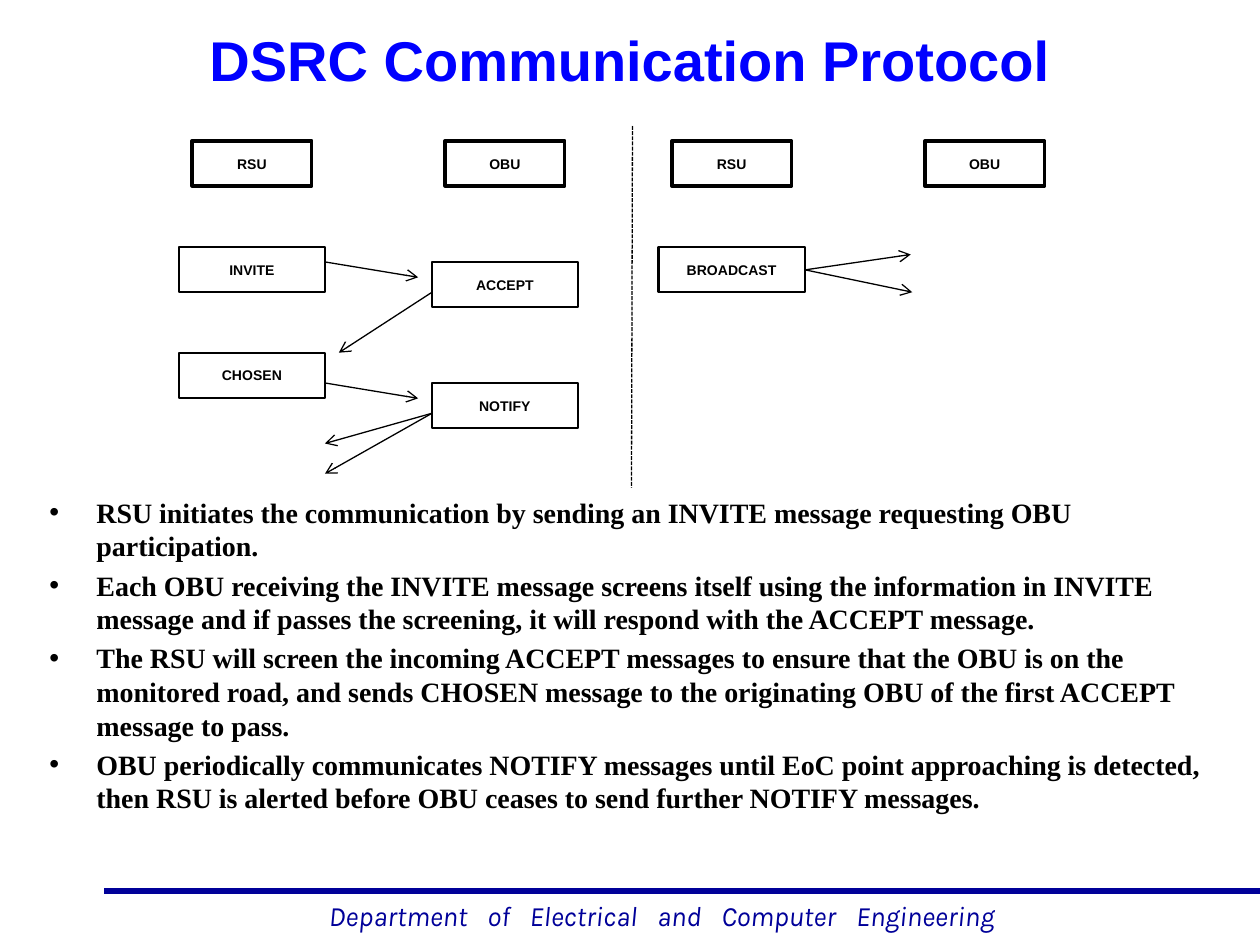
import pptx
import pptx.util
import pptx.dml.color
import pptx.enum.dml
import pptx.enum.shapes
import pptx.enum.text
import pptx.oxml.ns
import lxml.etree

Cm = pptx.util.Cm
Pt = pptx.util.Pt
RGBColor = pptx.dml.color.RGBColor
Anchor = pptx.enum.text.MSO_ANCHOR
Align = pptx.enum.text.PP_ALIGN
qn = pptx.oxml.ns.qn

BLACK = RGBColor(0x00, 0x00, 0x00)
WHITE = RGBColor(0xFF, 0xFF, 0xFF)
BLUE = RGBColor(0x00, 0x00, 0xFF)
NAVY = RGBColor(0x00, 0x00, 0x99)

TITLE = "DSRC Communication Protocol"
FOOTER = "Department of Electrical and Computer Engineering"
BULLETS = [
    "RSU initiates the communication by sending an INVITE message requesting OBU participation.",
    "Each OBU receiving the INVITE message screens itself using the information in INVITE message "
    "and if passes the screening, it will respond with the ACCEPT message.",
    "The RSU will screen the incoming ACCEPT messages to ensure that the OBU is on the monitored road, "
    "and sends CHOSEN message to the originating OBU of the first ACCEPT message to pass.",
    "OBU periodically communicates NOTIFY messages until EoC point approaching is detected, "
    "then RSU is alerted before OBU ceases to send further NOTIFY messages.",
]

COLUMN_CENTERS = [5.08, 10.18, 14.75, 19.85]
BOX_HEIGHT = 0.91
HEAD_TOP, HEAD_WIDTH, HEAD_LINE = 2.84, 2.41, 2
MESSAGE_WIDTH, MESSAGE_LINE = 2.95, 1.25
HEADS = ["RSU", "OBU", "RSU", "OBU"]
MESSAGES = [
    ("INVITE", 0, 4.98),
    ("ACCEPT", 1, 5.28),
    ("CHOSEN", 0, 7.11),
    ("NOTIFY", 1, 7.72),
    ("BROADCAST", 2, 4.98),
]
ARROWS = [
    (6.55, 5.28, 8.43, 5.59),
    (8.71, 5.89, 6.83, 7.11),
    (6.55, 7.72, 8.43, 8.03),
    (8.71, 8.33, 6.55, 9.55),
    (8.71, 8.33, 6.55, 8.94),
    (16.23, 5.44, 18.36, 5.13),
    (16.23, 5.44, 18.39, 5.89),
]
DIVIDER = (12.75, 2.54, 12.73, 9.83)
FOOTER_RULE = (2.1, 17.96, 25.4, 17.96)


def place(shape, left, top, width, height):
    shape.left, shape.top = Cm(left), Cm(top)
    shape.width, shape.height = Cm(width), Cm(height)


def style(font, name, size, color, bold=True):
    font.name, font.size, font.bold = name, Pt(size), bold
    font.color.rgb = color


def add_line(page, ends, color, width, arrow=False):
    line = page.shapes.add_connector(
        pptx.enum.shapes.MSO_CONNECTOR.STRAIGHT, *[Cm(value) for value in ends])
    line.line.color.rgb = color
    line.line.width = Pt(width)
    properties = line._element.spPr
    if arrow:
        lxml.etree.SubElement(properties.find(qn("a:ln")), qn("a:tailEnd"), type="arrow")
    lxml.etree.SubElement(properties, qn("a:effectLst"))
    return line


def add_box(page, label, column, top, width, line_width):
    box = page.shapes.add_shape(
        pptx.enum.shapes.MSO_SHAPE.FLOWCHART_PROCESS,
        Cm(COLUMN_CENTERS[column] - width / 2), Cm(top), Cm(width), Cm(BOX_HEIGHT))
    box.shadow.inherit = False
    box.fill.solid()
    box.fill.fore_color.rgb = WHITE
    box.line.color.rgb = BLACK
    box.line.width = Pt(line_width)
    frame = box.text_frame
    frame.text = label
    frame.vertical_anchor = Anchor.MIDDLE
    frame.paragraphs[0].alignment = Align.CENTER
    style(frame.paragraphs[0].runs[0].font, "Arial", 8, BLACK)


def add_title(page):
    title = page.shapes.title
    place(title, 1.27, 0.3, 22.86, 1.78)
    frame = title.text_frame
    frame.text = TITLE
    frame.auto_size = pptx.enum.text.MSO_AUTO_SIZE.NONE
    frame.vertical_anchor = Anchor.MIDDLE
    frame.paragraphs[0].alignment = Align.CENTER
    style(frame.paragraphs[0].runs[0].font, "Arial", 32, BLUE)


def add_bullets(page):
    body = page.placeholders[1]
    place(body, 0.74, 9.86, 23.93, 7.62)
    frame = body.text_frame
    frame.text = "\n".join(BULLETS)
    frame.auto_size = pptx.enum.text.MSO_AUTO_SIZE.NONE
    for index, para in enumerate(frame.paragraphs):
        properties = para._p.get_or_add_pPr()
        properties.set("marL", str(Cm(0.95)))
        properties.set("indent", str(Cm(-0.95)))
        lxml.etree.SubElement(properties, qn("a:buChar"), char="•")
        para.space_before = Pt(3.2 if index else 0)
        style(para.runs[0].font, "Times New Roman", 16, BLACK)


def add_footer(page):
    add_line(page, FOOTER_RULE, NAVY, 3)
    box = page.shapes.add_textbox(Cm(6.38), Cm(17.98), Cm(14.53), Cm(0.94))
    box.text_frame.word_wrap = False
    para = box.text_frame.paragraphs[0]
    for index, word in enumerate(FOOTER.split()):
        for text in ([" ", word] if index else [word]):
            span = para.add_run()
            span.text = text
            style(span.font, "Karla", 16, NAVY, bold=False)
            span.font.italic = True
            if text == " ":
                span.font._element.set("spc", "800")


def main():
    deck = pptx.Presentation()
    deck.slide_width, deck.slide_height = Cm(25.4), Cm(19.05)
    page = deck.slides.add_slide(deck.slide_layouts[1])
    add_footer(page)
    add_title(page)
    add_bullets(page)
    for ends in ARROWS:
        add_line(page, ends, BLACK, 0.75, arrow=True)
    for column, label in enumerate(HEADS):
        add_box(page, label, column, HEAD_TOP, HEAD_WIDTH, HEAD_LINE)
    for label, column, top in MESSAGES:
        add_box(page, label, column, top, MESSAGE_WIDTH, MESSAGE_LINE)
    divider = add_line(page, DIVIDER, BLACK, 0.75)
    divider.line.dash_style = pptx.enum.dml.MSO_LINE.SQUARE_DOT
    deck.save("out.pptx")


if __name__ == "__main__":
    main()
